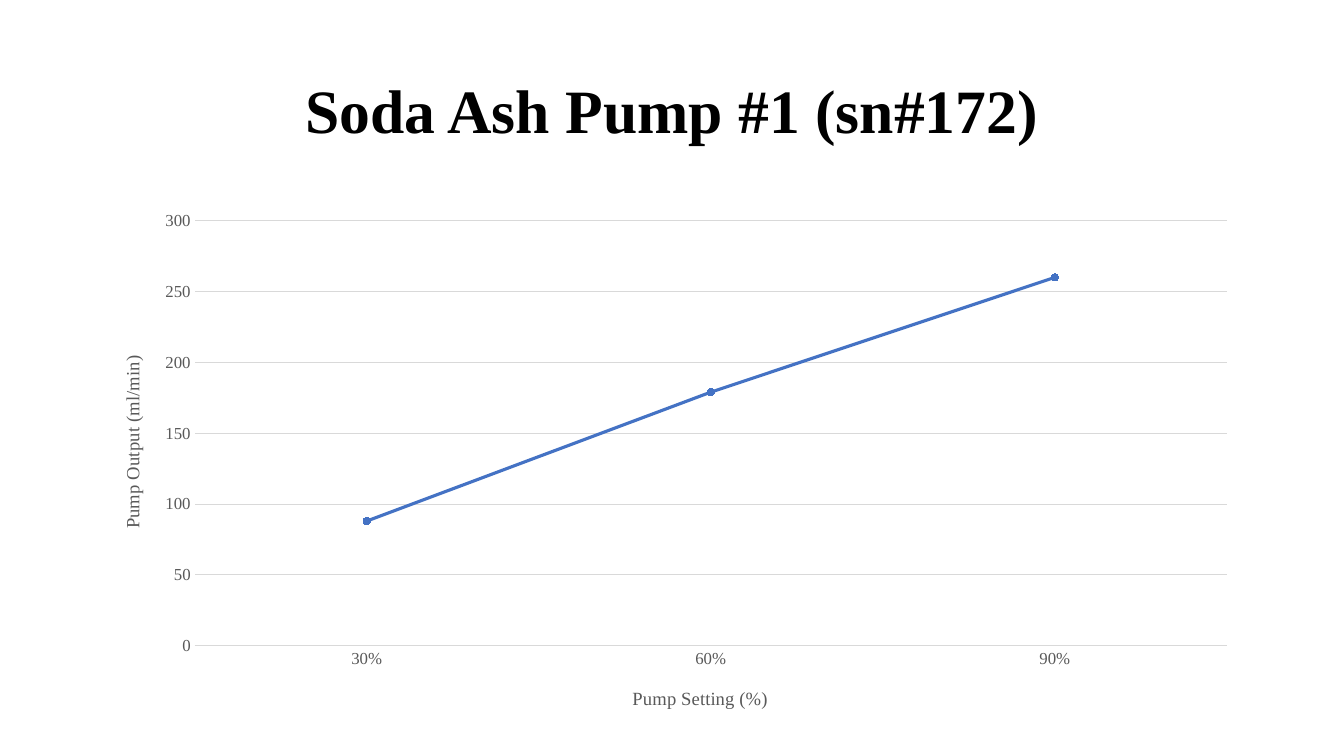
from dataclasses import dataclass
from typing import Any

from lxml import etree
from pptx import Presentation
from pptx import util as u
from pptx.chart import data as chart_data
from pptx.dml import color
from pptx.enum import chart as charts, text
from pptx.oxml import ns


@dataclass(frozen=True)
class Theme:
    font: str = "Times New Roman"
    ink: str = "000000"
    label: str = "595959"
    grid: str = "D9D9D9"
    accent: str = "4472C4"
    heading_size: float = 44
    axis_title_size: float = 13.3
    tick_size: float = 12
    grid_width: float = 0.75
    series_width: float = 2.25


@dataclass(frozen=True)
class Box:
    left: float
    top: float
    width: float
    height: float


@dataclass(frozen=True)
class AxisTitle:
    words: str
    left: float
    top: float
    rotation: int


THEME = Theme()
SLIDE_WIDTH, SLIDE_HEIGHT = u.Inches(13.33), u.Inches(7.5)
HEADING = Box(0.069, 0.053, 0.862, 0.193)
CHART = Box(0.069, 0.267, 0.862, 0.696)
PLOT = Box(0.088, 0.036, 0.891, 0.808)
SETTING = AxisTitle("Pump Setting (%)", 0.463, 0.915, 0)
OUTPUT = AxisTitle("Pump Output (ml/min)", 0.021, 0.286, -5400000)
READINGS = {0.3: 88, 0.6: 179, 0.9: 260}


def apply(target: Any, values: dict[str, Any]) -> None:
    for name, value in values.items():
        setattr(target, name, value)


def style_font(font: Any, size: float, ink: str, bold: bool = False) -> None:
    apply(font, {"name": THEME.font, "size": u.Pt(size), "bold": bold})
    font.color.rgb = color.RGBColor.from_string(ink)


def style_line(line: Any, ink: str, width: float) -> None:
    line.color.rgb = color.RGBColor.from_string(ink)
    line.width = u.Pt(width)


def place(box: Box) -> tuple[int, int, int, int]:
    return (
        round(box.left * SLIDE_WIDTH),
        round(box.top * SLIDE_HEIGHT),
        round(box.width * SLIDE_WIDTH),
        round(box.height * SLIDE_HEIGHT),
    )


def set_layout(parent: Any, index: int, values: dict[str, Any]) -> None:
    for layout in parent.findall(ns.qn("c:layout")):
        parent.remove(layout)
    layout = etree.Element(ns.qn("c:layout"))
    manual = etree.SubElement(layout, ns.qn("c:manualLayout"))
    for name, value in values.items():
        etree.SubElement(manual, ns.qn(f"c:{name}")).set("val", str(value))
    parent.insert(index, layout)


def style_axis(axis: Any, title: AxisTitle) -> None:
    apply(axis, {
        "major_tick_mark": charts.XL_TICK_MARK.NONE,
        "minor_tick_mark": charts.XL_TICK_MARK.NONE,
    })
    style_font(axis.tick_labels.font, THEME.tick_size, THEME.label)
    frame = axis.axis_title.text_frame
    frame.text = title.words
    style_font(frame.paragraphs[0].runs[0].font, THEME.axis_title_size, THEME.label)
    body = axis.axis_title._element.find(f".//{ns.qn('a:bodyPr')}")
    body.set("rot", str(title.rotation))
    body.set("vert", "horz")
    set_layout(axis.axis_title._element, 1, {
        "xMode": "edge", "yMode": "edge", "x": title.left, "y": title.top,
    })


def add_heading(slide: Any, words: str) -> None:
    frame = slide.shapes.add_textbox(*place(HEADING)).text_frame
    apply(frame, {"word_wrap": True, "vertical_anchor": text.MSO_ANCHOR.MIDDLE})
    paragraph = frame.paragraphs[0]
    apply(paragraph, {"alignment": text.PP_ALIGN.CENTER, "line_spacing": 0.9})
    run = paragraph.add_run()
    run.text = words
    style_font(run.font, THEME.heading_size, THEME.ink, bold=True)


def add_pump_chart(slide: Any) -> None:
    data = chart_data.CategoryChartData()
    data.categories = list(READINGS)
    data.categories.number_format = "0%"
    data.add_series("Series 1", list(READINGS.values()))
    chart = slide.shapes.add_chart(
        charts.XL_CHART_TYPE.LINE_MARKERS_STACKED, *place(CHART), data
    ).chart
    apply(chart, {"has_legend": False, "has_title": False})
    style_font(chart.font, THEME.tick_size, THEME.label)
    chart.plots[0].vary_by_categories = False

    setting, output = chart.category_axis, chart.value_axis
    style_axis(setting, SETTING)
    style_axis(output, OUTPUT)
    apply(setting.tick_labels, {"number_format": "0%", "number_format_is_linked": False})
    setting.has_major_gridlines = False
    style_line(setting.format.line, THEME.grid, THEME.grid_width)
    apply(output, {
        "minimum_scale": 0, "maximum_scale": 300, "major_unit": 50,
        "has_major_gridlines": True,
    })
    style_line(output.major_gridlines.format.line, THEME.grid, THEME.grid_width)
    output.format.line.fill.background()

    series = chart.plots[0].series[0]
    series.smooth = False
    style_line(series.format.line, THEME.accent, THEME.series_width)
    apply(series.marker, {"style": charts.XL_MARKER_STYLE.CIRCLE, "size": 5})
    series.marker.format.fill.solid()
    series.marker.format.fill.fore_color.rgb = color.RGBColor.from_string(THEME.accent)
    style_line(series.marker.format.line, THEME.accent, THEME.grid_width)

    plot_area = chart._chartSpace.find(f".//{ns.qn('c:plotArea')}")
    set_layout(plot_area, 0, {
        "layoutTarget": "inner", "xMode": "edge", "yMode": "edge",
        "x": PLOT.left, "y": PLOT.top, "w": PLOT.width, "h": PLOT.height,
    })


def main() -> None:
    presentation = Presentation()
    apply(presentation, {"slide_width": SLIDE_WIDTH, "slide_height": SLIDE_HEIGHT})
    slide = presentation.slides.add_slide(presentation.slide_layouts[6])
    add_heading(slide, "Soda Ash Pump #1 (sn#172)")
    add_pump_chart(slide)
    presentation.save("out.pptx")


if __name__ == "__main__":
    main()
